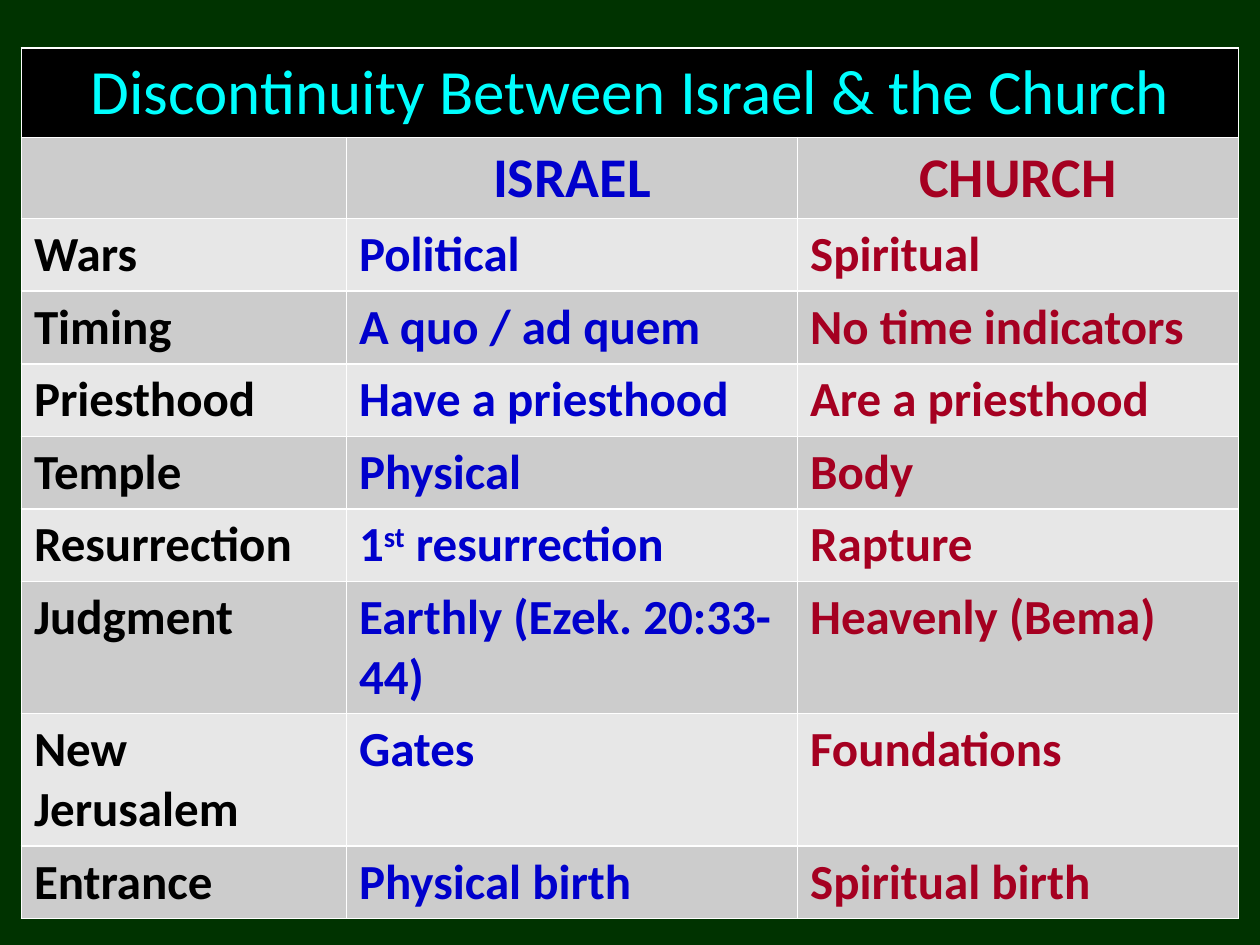
from typing import NamedTuple

from lxml.etree import SubElement
from pptx import Presentation
from pptx.dml.color import RGBColor
from pptx.enum.text import MSO_ANCHOR, PP_ALIGN
from pptx.oxml.ns import qn
from pptx.util import Inches, Pt

FONT = "Calibri"
BLACK, WHITE, CYAN = "000000", "FFFFFF", "00FFFF"
DARK_BAND, LIGHT_BAND = "CCCCCC", "E7E7E7"
COLUMN_COLORS = (BLACK, "0000CC", "A50021")
COLUMN_WIDTHS = (2.58, 3.58, 3.5)
ROW_HEIGHT = 0.5
TITLE = "Discontinuity Between Israel & the Church"


class Contrast(NamedTuple):
    topic: str
    israel: str
    church: str


class TextStyle(NamedTuple):
    size: int
    color: str
    bold: bool = True
    centered: bool = False


CONTRASTS = (
    Contrast("", "ISRAEL", "CHURCH"),
    Contrast("Wars", "Political", "Spiritual"),
    Contrast("Timing", "A quo / ad quem", "No time indicators"),
    Contrast("Priesthood", "Have a priesthood", "Are a priesthood"),
    Contrast("Temple", "Physical", "Body"),
    Contrast("Resurrection", "1^st^ resurrection", "Rapture"),
    Contrast("Judgment", "Earthly (Ezek. 20:33-44)", "Heavenly (Bema)"),
    Contrast("New Jerusalem", "Gates", "Foundations"),
    Contrast("Entrance", "Physical birth", "Spiritual birth"),
)


def rgb(color: str) -> RGBColor:
    return RGBColor.from_string(color)


def paint_cell(cell, color: str) -> None:
    """Give the cell white borders and a solid fill; borders come first in the schema."""
    properties = cell._tc.get_or_add_tcPr()
    for side in ("a:lnL", "a:lnR", "a:lnT", "a:lnB"):
        line = SubElement(properties, qn(side), w=str(Pt(1)))
        SubElement(SubElement(line, qn("a:solidFill")), qn("a:srgbClr"), val=WHITE)
    cell.fill.solid()
    cell.fill.fore_color.rgb = rgb(color)


def write_cell(cell, text: str, style: TextStyle) -> None:
    """Write styled text; parts between carets are superscript."""
    para = cell.text_frame.paragraphs[0]
    spacing = SubElement(para._p.get_or_add_pPr(), qn("a:spcBef"))
    SubElement(spacing, qn("a:spcPct"), val="20000")
    if style.centered:
        para.alignment = PP_ALIGN.CENTER
        cell.vertical_anchor = MSO_ANCHOR.MIDDLE
    for index, part in enumerate(text.split("^")):
        span = para.add_run()
        span.text = part
        span.font.name = FONT
        span.font.size = Pt(style.size)
        span.font.bold = style.bold
        span.font.color.rgb = rgb(style.color)
        if index % 2:
            span.font._element.set("baseline", "30000")


def add_contrast_table(page) -> None:
    row_count = len(CONTRASTS) + 1
    table = page.shapes.add_table(
        row_count, len(COLUMN_WIDTHS), Inches(0.17), Inches(0.38),
        Inches(sum(COLUMN_WIDTHS)), Inches(ROW_HEIGHT * row_count)).table
    table.first_row = False
    table.horz_banding = False
    for column, width in zip(table.columns, COLUMN_WIDTHS):
        column.width = Inches(width)

    for column in range(len(COLUMN_WIDTHS)):
        paint_cell(table.cell(0, column), BLACK)
    title = table.cell(0, 0)
    title.merge(table.cell(0, len(COLUMN_WIDTHS) - 1))
    write_cell(title, TITLE, TextStyle(36, CYAN, bold=False, centered=True))

    for row, contrast in enumerate(CONTRASTS, start=1):
        is_heading = row == 1
        for column, (text, color) in enumerate(zip(contrast, COLUMN_COLORS)):
            cell = table.cell(row, column)
            paint_cell(cell, DARK_BAND if row % 2 else LIGHT_BAND)
            if text:
                size = 32 if is_heading else 28
                write_cell(cell, text, TextStyle(size, color, centered=is_heading))


def main() -> None:
    deck = Presentation()
    deck.slide_width, deck.slide_height = Inches(10), Inches(7.5)
    page = deck.slides.add_slide(deck.slide_layouts[6])
    page.background.fill.solid()
    page.background.fill.fore_color.rgb = rgb("003300")
    add_contrast_table(page)
    deck.save("out.pptx")


if __name__ == "__main__":
    main()
